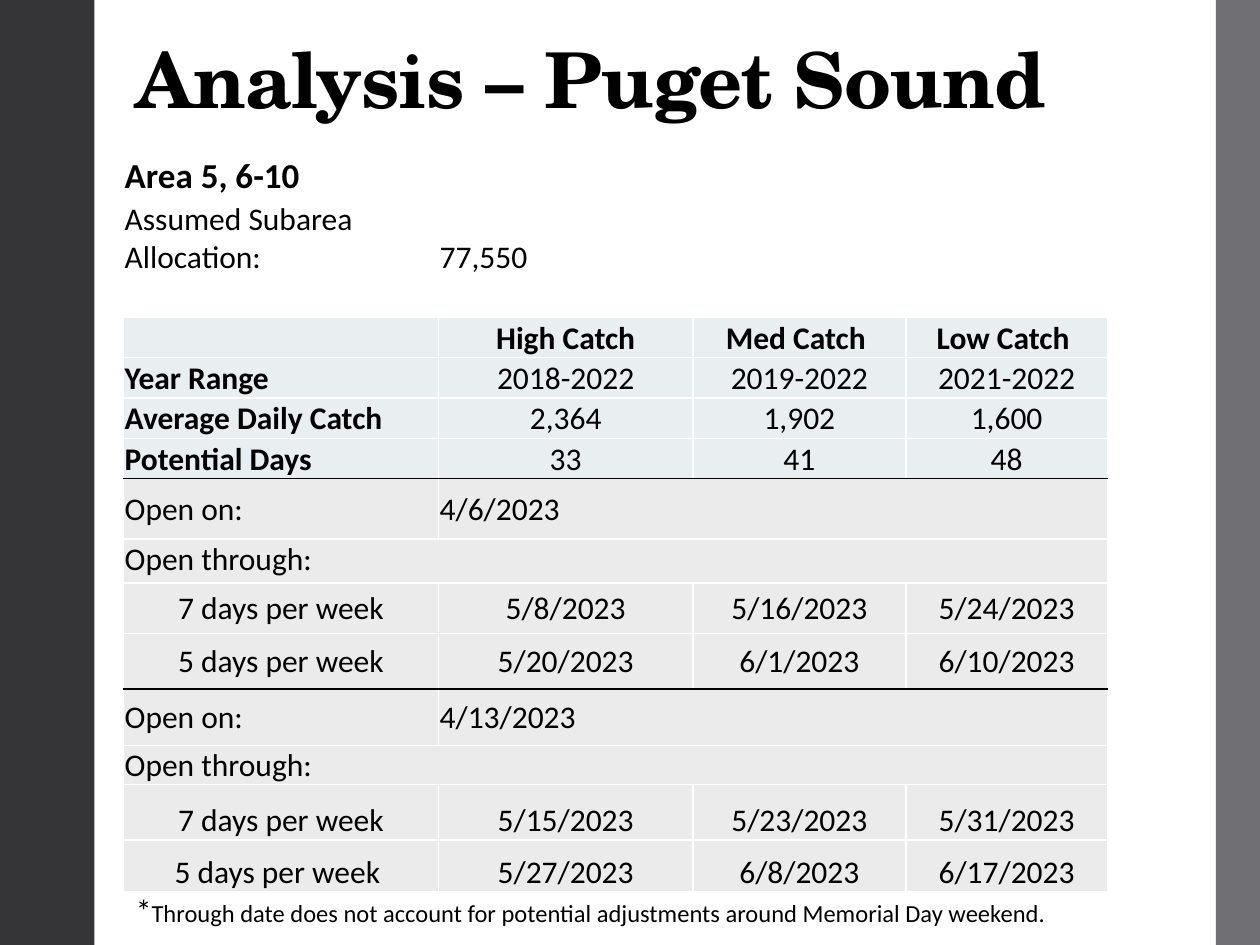
import pptx
import pptx.dml.color
import pptx.enum.shapes
import pptx.enum.text
import pptx.oxml
import pptx.oxml.ns
import pptx.util

WIDTH, HEIGHT = 10, 7.5
BLACK, WHITE = "000000", "FFFFFF"
HEADER_FILL, DATES_FILL = "E9EEF1", "EBEBEB"
LEFT_EDGE = 0.098
COLUMN_WIDTHS = [2.5, 2.02, 1.69, 1.6]
LEFT = pptx.enum.text.PP_ALIGN.LEFT
CENTER = pptx.enum.text.PP_ALIGN.CENTER
TOP = pptx.enum.text.MSO_ANCHOR.TOP
MIDDLE = pptx.enum.text.MSO_ANCHOR.MIDDLE
BOTTOM = pptx.enum.text.MSO_ANCHOR.BOTTOM

TABLE_ROWS = [
    (0.52, BOTTOM, None, LEFT, ["Area 5, 6-10", "", "", ""]),
    (0.63, BOTTOM, None, LEFT, ["Assumed Subarea Allocation:", "77,550", "", ""]),
    (0.32, BOTTOM, None, LEFT, ["", "", "", ""]),
    (0.32, BOTTOM, HEADER_FILL, LEFT, ["", "High Catch", "Med Catch ", "Low Catch "]),
    (0.32, BOTTOM, HEADER_FILL, LEFT, ["Year Range", "2018-2022", "2019-2022", "2021-2022"]),
    (0.32, BOTTOM, HEADER_FILL, LEFT, ["Average Daily Catch", "2,364", "1,902", "1,600"]),
    (0.32, BOTTOM, HEADER_FILL, LEFT, ["Potential Days", "33", "41", "48"]),
    (0.48, MIDDLE, DATES_FILL, LEFT, ["Open on:", "4/6/2023"]),
    (0.35, TOP, DATES_FILL, LEFT, ["Open through:"]),
    (0.4, MIDDLE, DATES_FILL, CENTER, ["7 days per week", "5/8/2023", "5/16/2023", "5/24/2023"]),
    (0.44, MIDDLE, DATES_FILL, CENTER, ["5 days per week", "5/20/2023", "6/1/2023", "6/10/2023"]),
    (0.45, MIDDLE, DATES_FILL, LEFT, ["Open on:", "4/13/2023"]),
    (0.28, MIDDLE, DATES_FILL, LEFT, ["Open through:"]),
    (0.44, BOTTOM, DATES_FILL, CENTER, ["7 days per week", "5/15/2023", "5/23/2023", "5/31/2023"]),
    (0.41, BOTTOM, DATES_FILL, CENTER, ["5 days per week ", "5/27/2023", "6/8/2023", "6/17/2023"]),
]
HEADING_ROW = 3
BLOCK_STARTS = (7, 11)


def color(value):
    return pptx.dml.color.RGBColor.from_string(value)


def place(left, top, width, height):
    shares = ((left, WIDTH), (top, HEIGHT), (width, WIDTH), (height, HEIGHT))
    return [pptx.util.Inches(share * size) for share, size in shares]


def add_text(paragraph, text, size=18, font="Calibri", bold=False, align=LEFT, spacing=None):
    paragraph.alignment = align
    run = paragraph.add_run()
    run.text = text
    run.font.size = pptx.util.Pt(size)
    run.font.name = font
    run.font.bold = bold
    run.font.color.rgb = color(BLACK)
    if spacing is not None:
        run.font._element.set("spc", str(int(spacing * 100)))


def add_bar(slide, left, width, fill):
    shape = slide.shapes.add_shape(
        pptx.enum.shapes.MSO_SHAPE.RECTANGLE, *place(left, 0, width, 1)
    )
    shape.shadow.inherit = False
    shape.fill.solid()
    shape.fill.fore_color.rgb = color(fill)
    shape.line.fill.background()


def add_box(slide, left, top, width, height, anchor=TOP):
    frame = slide.shapes.add_textbox(*place(left, top, width, height)).text_frame
    frame.word_wrap = True
    frame.vertical_anchor = anchor
    return frame.paragraphs[0]


def set_borders(cell, top, bottom):
    properties = cell._tc.get_or_add_tcPr()
    sides = (("L", WHITE), ("R", WHITE), ("T", top), ("B", bottom))
    for position, (side, value) in enumerate(sides):
        line = pptx.oxml.parse_xml(
            f'<a:ln{side} {pptx.oxml.ns.nsdecls("a")} w="12700">'
            f'<a:solidFill><a:srgbClr val="{value}"/></a:solidFill></a:ln{side}>'
        )
        properties.insert(position, line)


def format_cell(cell, anchor, fill):
    cell.margin_left = cell.margin_right = cell.margin_top = pptx.util.Inches(0.01)
    cell.margin_bottom = 0
    cell.vertical_anchor = anchor
    if fill:
        cell.fill.solid()
        cell.fill.fore_color.rgb = color(fill)
    else:
        cell.fill.background()


def add_catch_table(slide):
    last = len(COLUMN_WIDTHS) - 1
    shape = slide.shapes.add_table(
        len(TABLE_ROWS), last + 1, *place(LEFT_EDGE, 0.14, 0.781, 0.8)
    )
    table = shape.table
    table.first_row = table.horz_banding = False
    for column, width in zip(table.columns, COLUMN_WIDTHS):
        column.width = pptx.util.Inches(width)
    for row, (height, anchor, fill, label_align, texts) in enumerate(TABLE_ROWS):
        table.rows[row].height = pptx.util.Inches(height)
        top = BLACK if row in BLOCK_STARTS else WHITE
        bottom = BLACK if row + 1 in BLOCK_STARTS else WHITE
        for column in range(last + 1):
            cell = table.cell(row, column)
            format_cell(cell, anchor, fill)
            set_borders(cell, top, bottom)
        for column, text in enumerate(texts):
            if not text:
                continue
            is_label = column == 0
            is_value = not is_label and fill and len(texts) > last
            add_text(
                table.cell(row, column).text_frame.paragraphs[0],
                text,
                size=20 if row == 0 else 18,
                bold=row in (0, HEADING_ROW) or (is_label and fill == HEADER_FILL),
                align=CENTER if is_value else label_align,
            )
        if len(texts) <= last:
            table.cell(row, len(texts) - 1).merge(table.cell(row, last))


def main():
    presentation = pptx.Presentation()
    presentation.slide_width = pptx.util.Inches(WIDTH)
    presentation.slide_height = pptx.util.Inches(HEIGHT)
    slide = presentation.slides.add_slide(presentation.slide_layouts[6])
    add_bar(slide, 0, 0.075, "353537")
    add_bar(slide, 0.965, 0.035, "6F6F74")
    title = add_box(slide, LEFT_EDGE, 0.036, 0.809, 0.103, anchor=BOTTOM)
    title.line_spacing = 0.9
    add_text(title, "Analysis – Puget Sound", size=44, font="TeX Gyre Schola",
             bold=True, spacing=-0.5)
    add_catch_table(slide)
    footnote = add_box(slide, LEFT_EDGE, 0.936, 0.789, 0.053)
    add_text(footnote, "*")
    add_text(
        footnote,
        "Through date does not account for potential adjustments around Memorial Day weekend.",
        size=14,
    )
    presentation.save("out.pptx")


if __name__ == "__main__":
    main()
